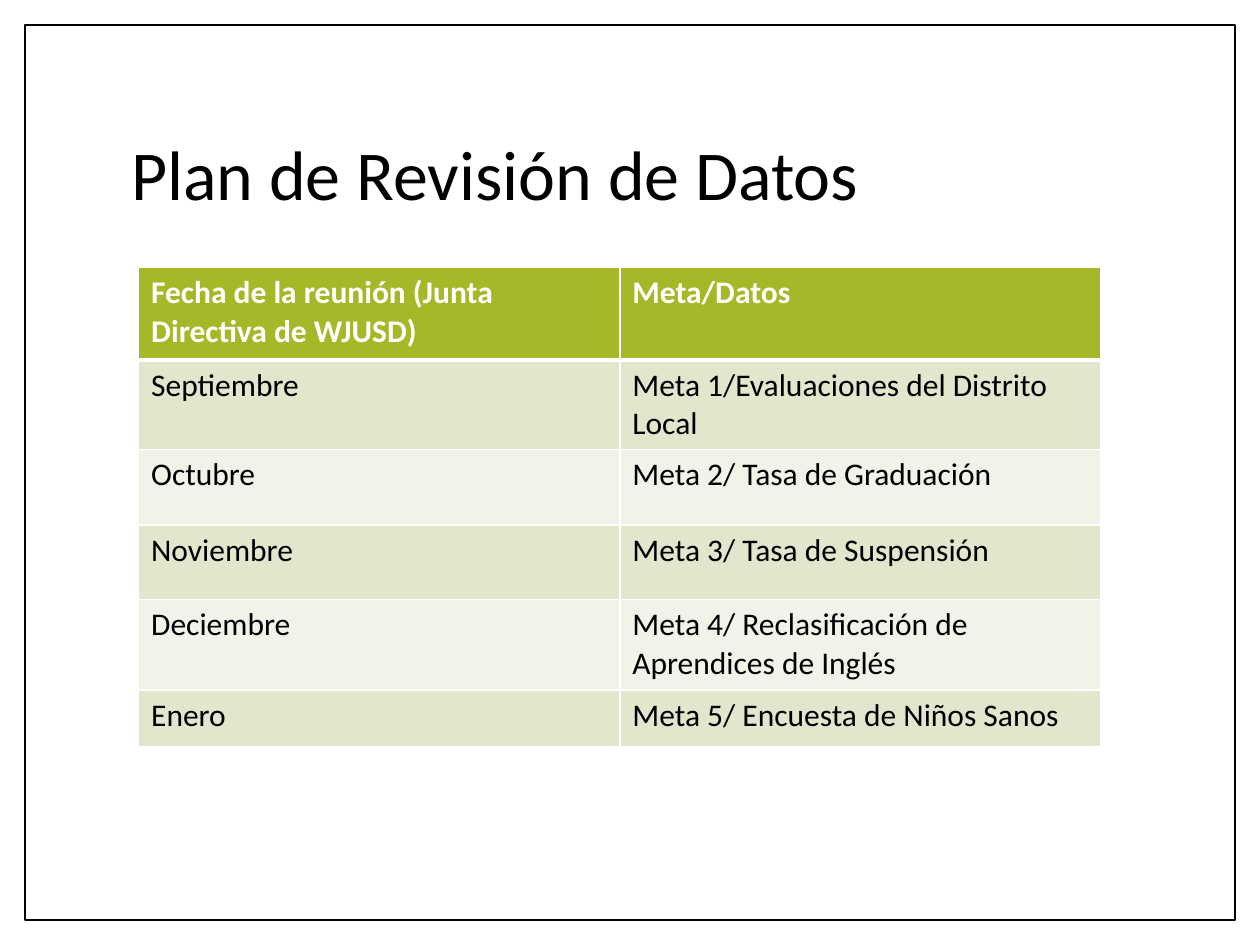
from lxml import etree
from pptx import Presentation
from pptx.dml.color import RGBColor
from pptx.enum import shapes, text
from pptx.oxml import ns
from pptx.util import Pt

TITLE = "Plan de Revisión de Datos"
ROWS = [
    ("Fecha de la reunión (Junta Directiva de WJUSD)", "Meta/Datos"),
    ("Septiembre", "Meta 1/Evaluaciones del Distrito Local"),
    ("Octubre", "Meta 2/ Tasa de Graduación"),
    ("Noviembre", "Meta 3/ Tasa de Suspensión"),
    ("Deciembre", "Meta 4/ Reclasificación de Aprendices de Inglés"),
    ("Enero", "Meta 5/ Encuesta de Niños Sanos"),
]
HEIGHTS = [53, 42.6, 43.2, 42.4, 51.8, 32.3]
WIDTH = 275

FONT = "Calibri"
BLACK = RGBColor(0, 0, 0)
WHITE = RGBColor(255, 255, 255)
GREEN = RGBColor(0xA6, 0xB7, 0x27)
BANDS = [RGBColor(0xF1, 0xF3, 0xE8), RGBColor(0xE1, 0xE6, 0xCD)]


def style(par, size, color, bold=False):
    font = par.font
    font.name, font.size, font.bold = FONT, Pt(size), bold
    font.color.rgb = color


def border(cell, top, bottom):
    """Draw white cell edges; top and bottom are widths in points."""
    props = cell._tc.get_or_add_tcPr()
    edges = [("lnL", 1), ("lnR", 1), ("lnT", top), ("lnB", bottom)]
    for i, (tag, width) in enumerate(edges):
        line = etree.Element(ns.qn("a:" + tag), w=str(Pt(width)))
        fill = etree.SubElement(line, ns.qn("a:solidFill"))
        etree.SubElement(fill, ns.qn("a:srgbClr"), val=str(WHITE))
        props.insert(i, line)


def add_frame(slide):
    frame = slide.shapes.add_shape(
        shapes.MSO_SHAPE.RECTANGLE, Pt(14.4), Pt(14.4), Pt(691.2), Pt(511.2))
    frame.shadow.inherit = False
    frame.fill.solid()
    frame.fill.fore_color.rgb = WHITE
    frame.line.color.rgb = BLACK
    frame.line.width = Pt(1)
    slide.shapes.title.element.addprevious(frame.element)


def add_title(slide):
    title = slide.shapes.title
    title.left, title.top = Pt(67.7), Pt(48.2)
    title.width, title.height = Pt(583.2), Pt(106.6)
    box = title.text_frame
    box.text = TITLE
    box.vertical_anchor = text.MSO_ANCHOR.MIDDLE
    par = box.paragraphs[0]
    par.alignment = text.PP_ALIGN.LEFT
    par.line_spacing = 0.9
    style(par, 40, BLACK)


def add_plan(slide):
    table = slide.shapes.add_table(
        len(ROWS), 2, Pt(79.2), Pt(152.8),
        Pt(2 * WIDTH), Pt(sum(HEIGHTS))).table
    for col in table.columns:
        col.width = Pt(WIDTH)
    for r, (row, height) in enumerate(zip(ROWS, HEIGHTS)):
        table.rows[r].height = Pt(height)
        head = r == 0
        for c, words in enumerate(row):
            cell = table.cell(r, c)
            cell.text = words
            style(cell.text_frame.paragraphs[0], 18,
                  WHITE if head else BLACK, head)
            cell.fill.solid()
            cell.fill.fore_color.rgb = GREEN if head else BANDS[r % 2]
            border(cell, 3 if r == 1 else 1, 3 if head else 1)


def main():
    deck = Presentation()
    deck.slide_width, deck.slide_height = Pt(720), Pt(540)
    slide = deck.slides.add_slide(deck.slide_layouts[5])
    add_frame(slide)
    add_title(slide)
    add_plan(slide)
    deck.save("out.pptx")


if __name__ == "__main__":
    main()
